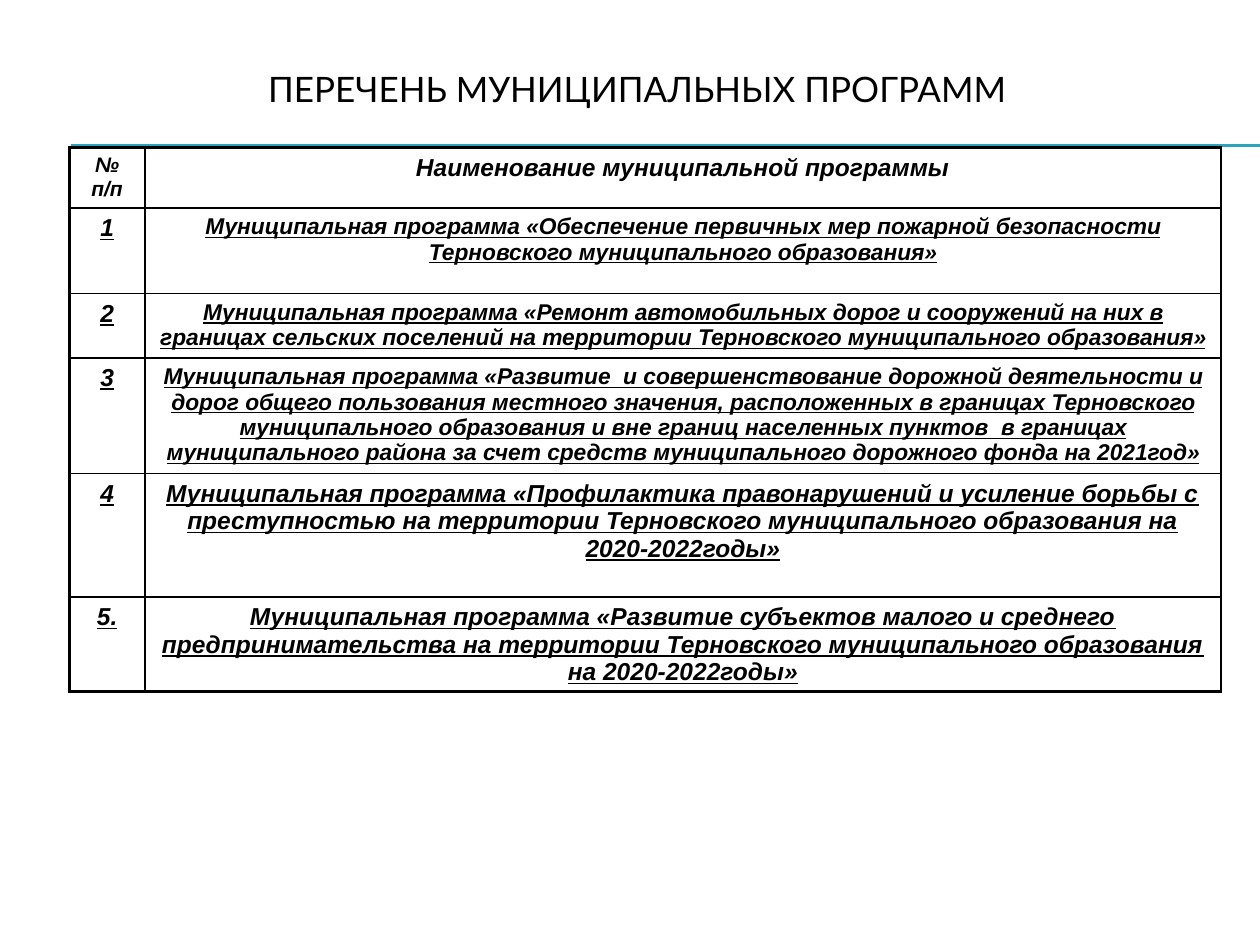
from lxml import etree
from pptx import Presentation
from pptx.dml.color import RGBColor
from pptx.enum.shapes import MSO_CONNECTOR
from pptx.enum.text import MSO_ANCHOR, PP_ALIGN
from pptx.oxml.ns import qn
from pptx.util import Inches, Pt

BLACK = RGBColor(0x00, 0x00, 0x00)
TEAL = RGBColor(0x2D, 0xA2, 0xBF)
CENTER = PP_ALIGN.CENTER
MIDDLE = MSO_ANCHOR.MIDDLE
STRAIGHT = MSO_CONNECTOR.STRAIGHT
THIN, THICK = 1, 2.25

COLS = (0.6, 8.54)
ROWS = (
    (0.48, ("№ п/п", 12), ("Наименование муниципальной программы", 14)),
    (0.68, ("1", 14), ("Муниципальная программа «Обеспечение первичных мер пожарной безопасности "
                       "Терновского муниципального образования»", 13)),
    (0.51, ("2", 14), ("Муниципальная программа «Ремонт автомобильных дорог и сооружений на них в "
                       "границах сельских поселений на территории Терновского муниципального "
                       "образования»", 13)),
    (0.9, ("3", 14), ("Муниципальная программа «Развитие  и совершенствование дорожной деятельности и "
                      "дорог общего пользования местного значения, расположенных в границах "
                      "Терновского муниципального образования и вне границ населенных пунктов  в "
                      "границах муниципального района за счет средств муниципального дорожного "
                      "фонда на 2021год»", 13)),
    (0.98, ("4", 14), ("Муниципальная программа «Профилактика правонарушений и усиление борьбы с "
                       "преступностью на территории Терновского муниципального образования на "
                       "2020-2022годы»", 14)),
    (0.75, ("5.", 14), ("Муниципальная программа «Развитие субъектов малого и среднего "
                        "предпринимательства на территории Терновского муниципального образования "
                        "на 2020-2022годы»", 14)),
)


def write(frame, text, size, font="Arial", bold=False, italic=False, under=False):
    """Put one centred, formatted run into a text frame."""
    frame.word_wrap = True
    para = frame.paragraphs[0]
    para.alignment = CENTER
    run = para.add_run()
    run.text = text
    face = run.font
    face.name, face.size = font, Pt(size)
    face.bold, face.italic, face.underline = bold, italic, under
    face.color.rgb = BLACK


class Deck:
    """Holds the style and the current slide."""

    def __init__(self):
        """Open a deck with one blank slide."""
        self.deck = Presentation()
        self.deck.slide_width, self.deck.slide_height = Inches(10), Inches(7.5)
        self.slide = self.deck.slides.add_slide(self.deck.slide_layouts[6])

    def rule(self, left, right, top):
        """Draw a level teal line."""
        line = self.slide.shapes.add_connector(
            STRAIGHT, Inches(left), Inches(top), Inches(right), Inches(top))
        line.line.color.rgb = TEAL
        line.line.width = Pt(0.75)
        etree.SubElement(line._element.spPr, qn("a:effectLst"))

    def title(self, text, *box):
        """Add the heading."""
        shape = self.slide.shapes.add_textbox(*map(Inches, box))
        shape.text_frame.vertical_anchor = MIDDLE
        write(shape.text_frame, text, 20, font="Lato")

    def edge(self, cell, widths):
        """Border a cell, with widths for left, right, top and bottom."""
        props = cell._tc.get_or_add_tcPr()
        for spot, (side, width) in enumerate(zip("LRTB", widths)):
            line = etree.Element(qn(f"a:ln{side}"), w=str(Pt(width)))
            fill = etree.SubElement(line, qn("a:solidFill"))
            etree.SubElement(fill, qn("a:srgbClr"), val=str(BLACK))
            props.insert(spot, line)

    def table(self, left, top, cols, rows):
        """Add the list of programmes with a heavy outer frame."""
        high = sum(row[0] for row in rows)
        grid = self.slide.shapes.add_table(
            len(rows), len(cols), Inches(left), Inches(top),
            Inches(sum(cols)), Inches(high)).table
        grid.first_row = grid.horz_banding = False
        for col, width in zip(grid.columns, cols):
            col.width = Inches(width)
        last = len(rows) - 1
        for y, (height, *cells) in enumerate(rows):
            grid.rows[y].height = Inches(height)
            for x, (text, size) in enumerate(cells):
                cell = grid.cell(y, x)
                cell.fill.background()
                cell.margin_bottom = 0
                write(cell.text_frame, text, size, bold=True, italic=True, under=y > 0)
                self.edge(cell, (THICK if x == 0 else THIN, THIN,
                                 THICK if y == 0 else THIN,
                                 THICK if y == last else THIN))


def main():
    """Build the slide and save it."""
    page = Deck()
    for top in (1.15, 1.16):
        page.rule(0.56, 10, top)
    page.title("ПЕРЕЧЕНЬ МУНИЦИПАЛЬНЫХ ПРОГРАММ", 0.31, 0.24, 9.5, 0.92)
    page.table(0.55, 1.17, COLS, ROWS)
    page.deck.save("out.pptx")


if __name__ == "__main__":
    main()
